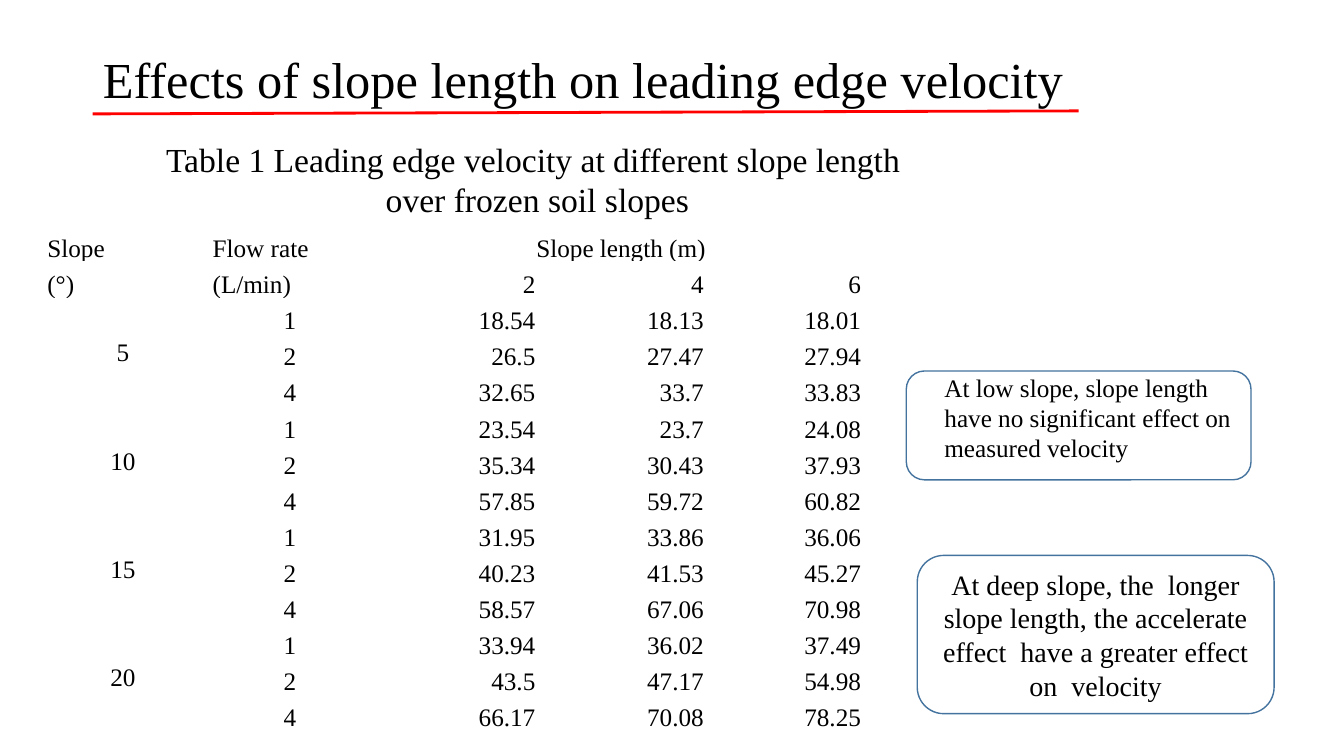
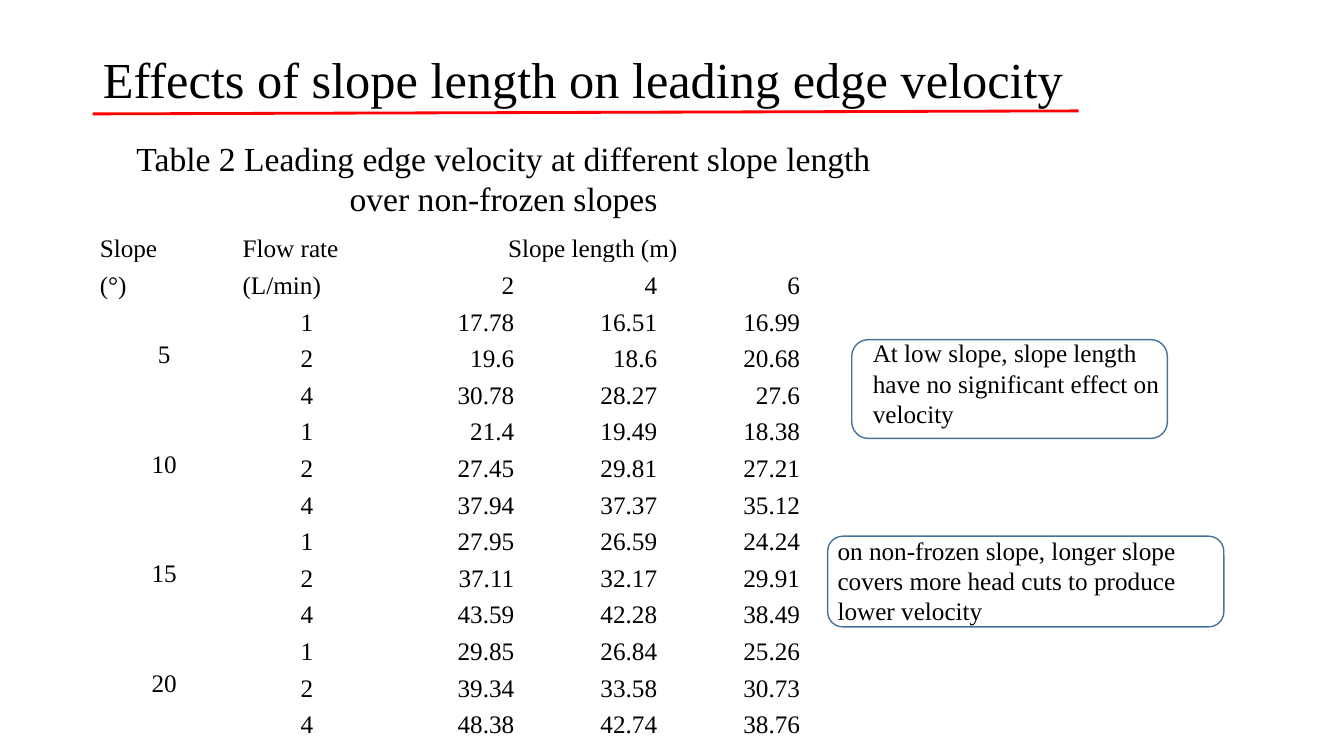
from dataclasses import dataclass
from typing import Any, NamedTuple

from lxml import etree
from pptx import Presentation
from pptx.dml.color import RGBColor
from pptx.enum.shapes import MSO_CONNECTOR as Connector, MSO_SHAPE as Shape
from pptx.enum.text import MSO_ANCHOR as Anchor, MSO_AUTO_SIZE as AutoSize, PP_ALIGN as Align
from pptx.oxml.ns import qn
from pptx.util import Inches, Pt

BLACK = RGBColor(0x00, 0x00, 0x00)
WHITE = RGBColor(0xFF, 0xFF, 0xFF)
RED = RGBColor(0xFF, 0x00, 0x00)
BLUE = RGBColor(0x43, 0x73, 0x9E)
FONT = "Times New Roman"

SLIDE_WIDTH, SLIDE_HEIGHT = Inches(13.33), Inches(7.5)
TITLE = "Effects of slope length on leading edge velocity"
SLOPES = (5, 10, 15, 20)
FLOW_RATES = (1, 2, 4)
SLOPE_LENGTHS = (2, 4, 6)
HEADER_ROWS = 2
LABEL_COLUMNS = 2

CELL_FORMAT = {"margin_left": Inches(0.07), "margin_right": Inches(0.07),
               "margin_top": 0, "margin_bottom": 0}
TABLE_FORMAT = {"first_row": False, "horz_banding": False}
TITLE_FORMAT = {"word_wrap": True, "auto_size": AutoSize.NONE,
                "vertical_anchor": Anchor.TOP, "margin_top": Inches(0.15)}
BOX_FORMAT = {"word_wrap": True, "vertical_anchor": Anchor.TOP}
FRAME_FORMAT = {"word_wrap": True, "vertical_anchor": Anchor.MIDDLE}


def across(percent: float) -> int:
    return round(SLIDE_WIDTH * percent / 100)


def down(percent: float) -> int:
    return round(SLIDE_HEIGHT * percent / 100)


class Area(NamedTuple):
    """A rectangle in percent of the slide's width and height."""
    left: float
    top: float
    width: float
    height: float

    def lengths(self) -> tuple[int, int, int, int]:
        return across(self.left), down(self.top), across(self.width), down(self.height)


TITLE_AREA = Area(6.9, 5.33, 86.25, 24.67)
RULE_START, RULE_END = (6.9, 15.07), (80.25, 14.67)
TABLE_TOP = 30


@dataclass(frozen=True)
class Note:
    """A rounded frame; its text is inside it unless it has an area of its own."""
    text: str
    frame: Area
    text_area: Area | None = None


@dataclass(frozen=True)
class VelocityPage:
    caption: tuple[str, ...]
    caption_area: Area
    table_left: float
    columns: tuple[float, ...]
    row_height: float
    velocities: tuple[tuple[float, ...], ...]
    notes: tuple[Note, ...]


PAGES = (
    VelocityPage(
        caption=("Table 1 Leading edge velocity at different slope length",
                 " over frozen soil slopes"),
        caption_area=Area(0, 17.73, 79.35, 17.47),
        table_left=3,
        columns=(12.3, 12.53, 12.53, 12.53, 11.7),
        row_height=4.78,
        velocities=(
            (18.54, 18.13, 18.01), (26.5, 27.47, 27.94), (32.65, 33.7, 33.83),
            (23.54, 23.7, 24.08), (35.34, 30.43, 37.93), (57.85, 59.72, 60.82),
            (31.95, 33.86, 36.06), (40.23, 41.53, 45.27), (58.57, 67.06, 70.98),
            (33.94, 36.02, 37.49), (43.5, 47.17, 54.98), (66.17, 70.08, 78.25),
        ),
        notes=(
            Note("At low slope, slope length have no significant effect on measured velocity",
                 Area(67.43, 49.07, 25.65, 14.4), Area(69.53, 48.53, 24.08, 13.47)),
            Note("At deep slope, the  longer slope length, the accelerate effect  "
                 "have a greater effect on  velocity",
                 Area(68.25, 73.47, 26.55, 20.93)),
        ),
    ),
    VelocityPage(
        caption=("Table 2 Leading edge velocity at different slope length",
                 "over non-frozen slopes"),
        caption_area=Area(8.93, 17.6, 57.08, 16.13),
        table_left=6.9,
        columns=(10.63,) * 5,
        row_height=4.84,
        velocities=(
            (17.78, 16.51, 16.99), (19.6, 18.6, 20.68), (30.78, 28.27, 27.6),
            (21.4, 19.49, 18.38), (27.45, 29.81, 27.21), (37.94, 37.37, 35.12),
            (27.95, 26.59, 24.24), (37.11, 32.17, 29.91), (43.59, 42.28, 38.49),
            (29.85, 26.84, 25.26), (39.34, 33.58, 30.73), (48.38, 42.74, 38.76),
        ),
        notes=(
            Note("At low slope, slope length have no significant effect on velocity",
                 Area(63.38, 44.93, 23.48, 13.07), Area(64.2, 44, 24.08, 13.47)),
            Note("on non-frozen slope, longer slope covers more head cuts "
                 "to produce lower velocity",
                 Area(61.58, 70.93, 29.48, 12), Area(61.58, 70.13, 29.48, 13.47)),
        ),
    ),
)


def apply(target: Any, values: dict[str, Any]) -> None:
    for name, value in values.items():
        setattr(target, name, value)


def write(text_frame: Any, lines: tuple[str, ...], size: int,
          align: Align = Align.LEFT, spacing: float = 1.0) -> None:
    text_frame.text = "\n".join(lines)
    for para in text_frame.paragraphs:
        apply(para, {"alignment": align, "line_spacing": spacing})
        for span in para.runs:
            apply(span.font, {"name": FONT, "size": Pt(size), "bold": False})
            span.font.color.rgb = BLACK


def add_title(page: Any) -> None:
    title = page.shapes.title
    apply(title, dict(zip(("left", "top", "width", "height"), TITLE_AREA.lengths())))
    apply(title.text_frame, TITLE_FORMAT)
    write(title.text_frame, (TITLE,), 36, spacing=0.9)


def add_title_rule(page: Any) -> None:
    (x1, y1), (x2, y2) = RULE_START, RULE_END
    rule = page.shapes.add_connector(Connector.STRAIGHT, across(x1), down(y1),
                                     across(x2), down(y2))
    rule.line.color.rgb = RED
    rule.line.width = Pt(2)
    etree.SubElement(rule._element.spPr, qn("a:effectLst"))


def add_text(page: Any, area: Area, lines: tuple[str, ...], size: int,
             align: Align = Align.LEFT) -> None:
    box = page.shapes.add_textbox(*area.lengths())
    apply(box.text_frame, BOX_FORMAT)
    write(box.text_frame, lines, size, align)


def add_note(page: Any, note: Note) -> None:
    if note.text_area:
        add_text(page, note.text_area, (note.text,), 18)
    frame = page.shapes.add_shape(Shape.ROUNDED_RECTANGLE, *note.frame.lengths())
    frame.shadow.inherit = False
    frame.fill.background()
    frame.line.color.rgb = BLUE
    frame.line.width = Pt(1)
    if not note.text_area:
        apply(frame.text_frame, FRAME_FORMAT)
        write(frame.text_frame, (note.text,), 20, Align.CENTER)


def set_borders(cell: Any, bottom_width: int) -> None:
    properties = cell._tc.get_or_add_tcPr()
    widths = {"a:lnL": 1, "a:lnR": 1, "a:lnT": 1, "a:lnB": bottom_width}
    for position, (tag, width) in enumerate(widths.items()):
        border = etree.Element(qn(tag), w=str(Pt(width)))
        fill = etree.SubElement(border, qn("a:solidFill"))
        etree.SubElement(fill, qn("a:srgbClr"), val=str(WHITE))
        properties.insert(position, border)


def table_rows(velocities: tuple[tuple[float, ...], ...]) -> list[list[str]]:
    rows = [["Slope", "Flow rate", "Slope length (m)", "", ""],
            ["(°)", "(L/min)", *map(str, SLOPE_LENGTHS)]]
    for index, values in enumerate(velocities):
        slope, rate = divmod(index, len(FLOW_RATES))
        label = str(SLOPES[slope]) if rate == 0 else ""
        rows.append([label, str(FLOW_RATES[rate]), *(f"{value:g}" for value in values)])
    return rows


def cell_alignment(row: int, column: int) -> Align:
    if column < LABEL_COLUMNS:
        return Align.LEFT if row < HEADER_ROWS else Align.CENTER
    return Align.CENTER if row == 0 else Align.RIGHT


def add_velocity_table(page: Any, content: VelocityPage) -> None:
    rows = table_rows(content.velocities)
    area = Area(content.table_left, TABLE_TOP, sum(content.columns),
                content.row_height * len(rows))
    table = page.shapes.add_table(len(rows), len(content.columns), *area.lengths()).table
    apply(table, TABLE_FORMAT)
    for column, width in zip(table.columns, content.columns):
        column.width = across(width)
    for row in table.rows:
        row.height = down(content.row_height)

    table.cell(0, LABEL_COLUMNS).merge(table.cell(0, len(content.columns) - 1))
    for top in range(HEADER_ROWS, len(rows), len(FLOW_RATES)):
        table.cell(top, 0).merge(table.cell(top + len(FLOW_RATES) - 1, 0))

    for r, texts in enumerate(rows):
        for c, text in enumerate(texts):
            cell = table.cell(r, c)
            is_slope = r >= HEADER_ROWS and c == 0
            apply(cell, CELL_FORMAT)
            cell.vertical_anchor = Anchor.MIDDLE if is_slope else Anchor.BOTTOM
            cell.fill.background()
            set_borders(cell, 3 if r == 0 else 1)
            if text:
                write(cell.text_frame, (text,), 18, cell_alignment(r, c))


def main() -> None:
    deck = Presentation()
    apply(deck, {"slide_width": SLIDE_WIDTH, "slide_height": SLIDE_HEIGHT})
    title_only = deck.slide_layouts.get_by_name("Title Only")
    for content in PAGES:
        page = deck.slides.add_slide(title_only)
        add_title(page)
        add_title_rule(page)
        add_velocity_table(page, content)
        add_text(page, content.caption_area, content.caption, 24, Align.CENTER)
        for note in content.notes:
            add_note(page, note)
    deck.save("out.pptx")


if __name__ == "__main__":
    main()
